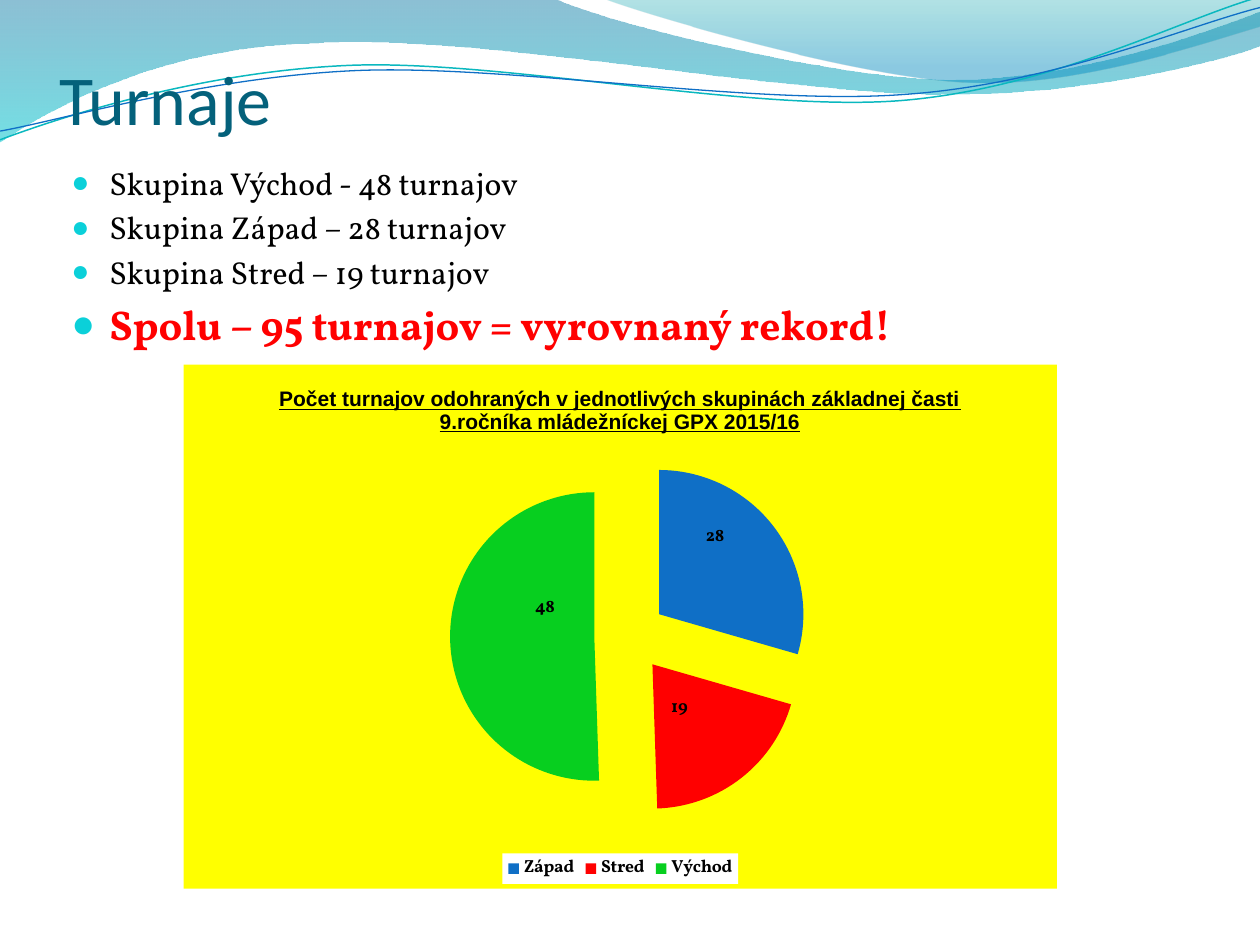
from dataclasses import dataclass

from lxml.etree import SubElement
from pptx import Presentation
from pptx.chart.data import CategoryChartData
from pptx.dml.color import RGBColor
from pptx.enum.chart import XL_CHART_TYPE, XL_LABEL_POSITION, XL_LEGEND_POSITION
from pptx.enum.text import MSO_ANCHOR
from pptx.oxml import parse_xml
from pptx.oxml.ns import nsdecls, qn
from pptx.util import Pt


@dataclass(frozen=True)
class Theme:
    title: str = "04617B"
    text: str = "000000"
    accent: str = "FF0000"
    bullet: str = "0BD0D9"
    panel: str = "FFFF00"
    legend: str = "FFFFFF"
    slices: tuple = ("0F6FC6", "FF0000", "07CF1F")
    head_font: str = "Calibri"
    body_font: str = "Vollkorn"
    chart_font: str = "Arial"
    title_size: float = 40
    body_size: float = 18.1
    total_size: float = 23.8
    chart_title_size: float = 12
    chart_size: float = 10


T = Theme()

# Wave outlines in points: a pair is a corner, three pairs are a Bézier curve
BANDS = [
    ([(0, 0), (317, -0.7),
      ((342.7, 12.2), (478, 45.4), (545.8, 45.4)),
      ((613.8, 45.4), (689.8, 18.7), (720, 6.5)),
      (720.7, 26),
      ((707.8, 31.7), (626.4, 54.7), (537.1, 54)),
      ((447.8, 54), (275, 20.2), (185, 24.5)),
      ((92.9, 26), (33, 59.8), (-0.7, 81.4))],
     [(0, "0074A1", 45), (1, "00C6CF", 55)]),
    ([(344.9, -0.7),
      ((366.5, 8), (491, 44.6), (553.7, 46.8)),
      ((616.3, 49.7), (692, 23), (720, 15)),
      (720, 0)],
     [(0, "00A1A9", 30), (0.8, "008BBF", 45)]),
]
STROKES = [
    ([(0, 79.9),
      ((34.6, 67), (113.8, 41), (199.4, 37.4)),
      ((284.4, 33.8), (427, 64), (513.4, 57.6)),
      ((599.8, 51), (675.4, 10.8), (718.6, -1.4))], "0AB8BF", 0.85),
    ([(0, 74.9),
      ((33.8, 69), (118, 44), (203.8, 40.3)),
      ((290, 36.7), (429.8, 60.5), (516.2, 54)),
      ((602, 48.2), (677.5, 15), (720, 4.3))], "0F6FC6", 0.75),
]


def rgb(code):
    return RGBColor.from_string(code)


def style(font, name, size, color, bold=False):
    font.name, font.size, font.bold = name, Pt(size), bold
    font.color.rgb = rgb(color)


def add_outline(s, box, outline, close):
    """Draw a freeform through the corners, then bend its curved sides."""
    parts = [part if isinstance(part[0], tuple) else (part,) for part in outline]
    parts = [[(Pt(box[0] + x), Pt(box[1] + y)) for x, y in part] for part in parts]
    builder = s.shapes.build_freeform(*parts[0][-1])
    builder.add_line_segments([part[-1] for part in parts[1:]], close=close)
    sp = builder.convert_to_shape()
    sp.shadow.inherit = False
    sides = list(sp._element.iter(qn("a:lnTo")))
    for side, part in zip(sides, parts[1:]):
        if len(part) == 3:
            curve = side.makeelement(qn("a:cubicBezTo"))
            for x, y in part:
                SubElement(curve, qn("a:pt"), x=str(x - sp.left), y=str(y - sp.top))
            side.getparent().replace(side, curve)
    return sp


def add_waves(s, box):
    for outline, stops in BANDS:
        sp = add_outline(s, box, outline, True)
        sp.line.fill.background()
        sp.fill.gradient()
        sp.fill.gradient_angle = 270
        for stop, (pos, color, _) in zip(sp.fill.gradient_stops, stops):
            stop.position = pos
            stop.color.rgb = rgb(color)
        for clr, (_, _, alpha) in zip(sp._element.spPr.iter(qn("a:srgbClr")), stops):
            SubElement(clr, qn("a:alpha"), val=str(alpha * 1000))
    for outline, color, width in STROKES:
        sp = add_outline(s, box, outline, False)
        sp.fill.background()
        sp.line.color.rgb = rgb(color)
        sp.line.width = Pt(width)


def add_text(s, box):
    tf = s.shapes.add_textbox(*map(Pt, box)).text_frame
    tf.word_wrap = True
    return tf


def add_title(s, box, text):
    tf = add_text(s, box)
    tf.vertical_anchor = MSO_ANCHOR.BOTTOM
    tf.margin_left = tf.margin_right = tf.margin_bottom = 0
    r = tf.paragraphs[0].add_run()
    r.text = text
    style(r.font, T.head_font, T.title_size, T.title)


def add_bullets(s, box, items, total):
    tf = add_text(s, box)
    rows = [(item, T.body_size, T.text, False) for item in items]
    rows.append((total, T.total_size, T.accent, True))
    for i, (text, size, color, bold) in enumerate(rows):
        p = tf.add_paragraph() if i else tf.paragraphs[0]
        p.space_before = Pt(round(size * 0.2, 1))
        pPr = p._p.get_or_add_pPr()
        pPr.set("marL", str(Pt(21.6)))
        pPr.set("indent", str(-Pt(21.6)))
        SubElement(SubElement(pPr, qn("a:buClr")), qn("a:srgbClr"), val=T.bullet)
        SubElement(pPr, qn("a:buSzPct"), val="95000")
        SubElement(pPr, qn("a:buFont"), typeface="Arial")
        SubElement(pPr, qn("a:buChar"), char="●")
        r = p.add_run()
        r.text = text
        style(r.font, T.body_font, size, color, bold)


def set_layout(parent, after, modes=("xMode", "yMode"), **percent):
    """Place a chart part by percentages of the chart's size."""
    for old in parent.findall(qn("c:layout")):
        parent.remove(old)
    layout = parse_xml(f"<c:layout {nsdecls('c')}><c:manualLayout/></c:layout>")
    for mode in modes:
        SubElement(layout[0], qn(f"c:{mode}"),
                   val="inner" if mode == "layoutTarget" else "edge")
    for tag, value in percent.items():
        SubElement(layout[0], qn(f"c:{tag}"), val=f"{value / 100:.4f}")
    if after:
        parent.find(qn(after)).addnext(layout)
    else:
        parent.insert(0, layout)


def area(color=None):
    fill = f'<a:solidFill><a:srgbClr val="{color}"/></a:solidFill>' if color else "<a:noFill/>"
    return parse_xml(f"<c:spPr {nsdecls('c', 'a')}>{fill}<a:ln><a:noFill/></a:ln></c:spPr>")


def add_pie(s, box, title, values, offsets):
    data = CategoryChartData()
    data.categories = list(values)
    data.add_series("Series 1", list(values.values()))
    chart = s.shapes.add_chart(XL_CHART_TYPE.PIE, *map(Pt, box), data).chart
    style(chart.font, T.body_font, T.chart_size, T.text)
    space = chart._chartSpace
    space.find(qn("c:chart")).addnext(area(T.panel))

    # Heading
    r = chart.chart_title.text_frame.paragraphs[0].add_run()
    r.text = title
    style(r.font, T.chart_font, T.chart_title_size, T.text, True)
    r.font.underline = True
    set_layout(chart.chart_title._element, "c:tx", x=10.5, y=3.4)

    # Slices and their values
    plot = chart.plots[0]
    plot.vary_by_categories = True
    series = plot.series[0]
    for i, (color, (dx, dy)) in enumerate(zip(T.slices, offsets)):
        point = series.points[i]
        point.format.fill.solid()
        point.format.fill.fore_color.rgb = rgb(color)
        point.format.line.fill.background()
        label = point.data_label
        style(label.font, T.body_font, T.chart_size, T.text, True)
        label.position = XL_LABEL_POSITION.CENTER
        set_layout(series._element.findall(".//" + qn("c:dLbl"))[i], "c:idx", (), x=dx, y=dy)
    series._element.find(qn("c:dPt")).addprevious(
        parse_xml(f'<c:explosion {nsdecls("c")} val="25"/>'))
    plot_area = space.find(".//" + qn("c:plotArea"))
    set_layout(plot_area, None, ("layoutTarget", "xMode", "yMode"),
               x=30.5, y=17.4, w=41.3, h=68.8)
    plot_area.append(area())

    # Legend
    chart.has_legend = True
    legend = chart.legend
    legend.position = XL_LEGEND_POSITION.BOTTOM
    legend.include_in_layout = False
    style(legend.font, T.body_font, T.chart_size, T.text, True)
    legend._element.find(qn("c:txPr")).addprevious(area(T.legend))
    set_layout(legend._element, "c:legendPos", x=36.5, y=94.2, w=27, h=6.5)


def main():
    prs = Presentation()
    prs.slide_width, prs.slide_height = Pt(720), Pt(540)
    s = prs.slides.add_slide(prs.slide_layouts[6])
    add_waves(s, (0, 0))
    add_bullets(s, (33.8, 90, 513.4, 123),
                ["Skupina Východ - 48 turnajov", "Skupina Západ – 28 turnajov",
                 "Skupina Stred – 19 turnajov"],
                "Spolu – 95 turnajov = vyrovnaný rekord!")
    add_title(s, (33.8, 33.8, 648, 46), "Turnaje")
    add_pie(s, (105, 208.3, 499, 299.5),
            "Počet turnajov odohraných v jednotlivých skupinách základnej časti "
            "9.ročníka mládežníckej GPX 2015/16",
            {"Západ": 28, "Stred": 19, "Východ": 48},
            [(-0.2, -6.4), (-2, -2.5), (2.6, -5.5)])
    prs.save("out.pptx")


if __name__ == "__main__":
    main()
